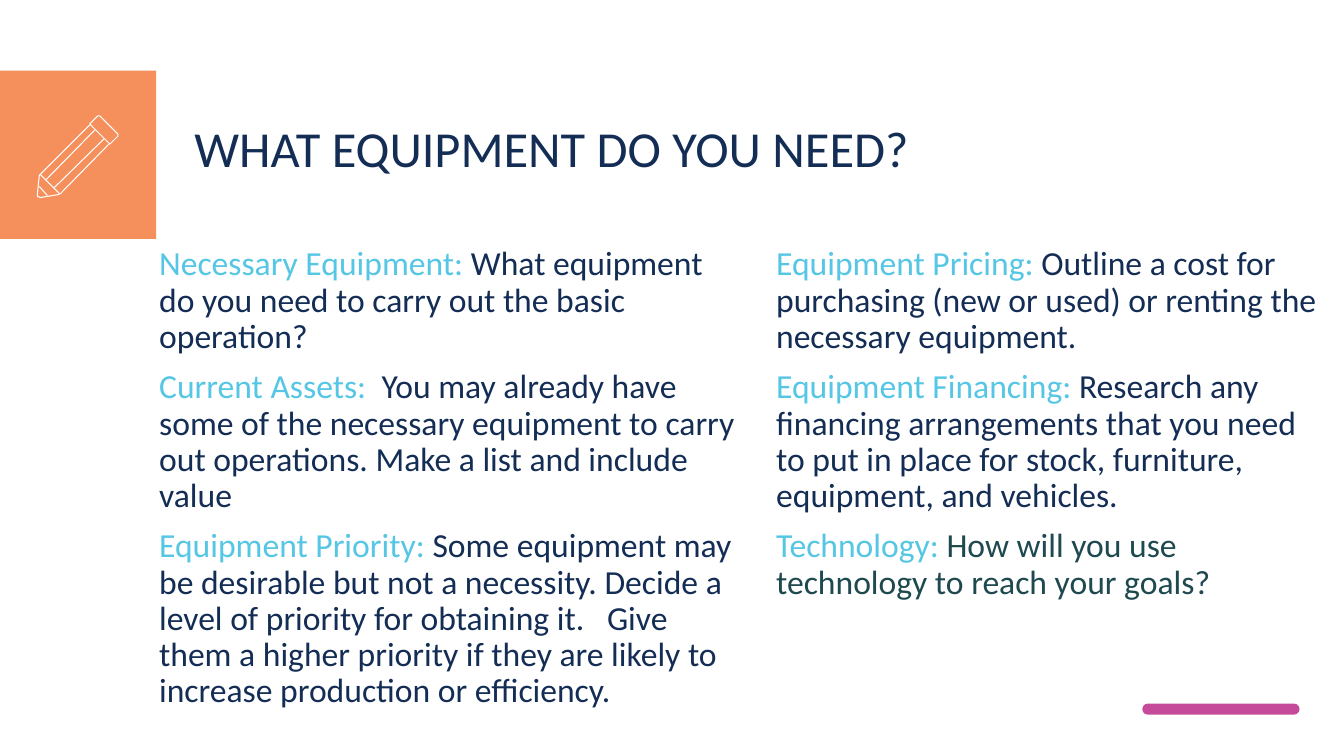
from lxml import etree
from pptx import Presentation
from pptx.dml.color import RGBColor
from pptx.enum.shapes import MSO_CONNECTOR, MSO_SHAPE
from pptx.enum.text import MSO_ANCHOR
from pptx.oxml.ns import qn
from pptx.util import Inches, Pt

RECT, PILL = MSO_SHAPE.RECTANGLE, MSO_SHAPE.ROUNDED_RECTANGLE
STRAIGHT, TOP = MSO_CONNECTOR.STRAIGHT, MSO_ANCHOR.TOP

# Content: each paragraph is a list of (text, colour name)
TITLE = [[("WHAT EQUIPMENT DO YOU NEED?", "navy")]]
LEFT = [
    [("Necessary Equipment: ", "sky"),
     ("What equipment do you need to carry out the basic operation?", "navy")],
    [("Current Assets:  ", "sky"),
     ("You may already have some of the necessary equipment to carry out "
      "operations. Make a list and include value", "navy")],
    [("Equipment Priority: ", "sky"),
     ("Some equipment may be desirable but not a necessity. Decide a level of "
      "priority for obtaining it.   Give them a higher priority if they are "
      "likely to increase production or efficiency.", "navy")],
]
RIGHT = [
    [("Equipment Pricing: ", "sky"),
     ("Outline a cost for purchasing (new or used) or renting the necessary "
      "equipment.", "navy")],
    [("Equipment Financing: ", "sky"),
     ("Research any financing arrangements that you need to put in place for "
      "stock, furniture, equipment, and vehicles.", "navy")],
    [("Technology: ", "sky"),
     ("How will you use technology to reach your goals?", "teal")],
]

# Theme and layout, in inches
THEME = {
    "navy": "142D55", "sky": "56C6E5", "teal": "1E494F", "white": "FFFFFF",
    "orange": "F26B27", "pink": "C54A9A",
    "font": "Calibri", "title": 36, "body": 24, "stroke": 0.75,
}
SLIDE_W, SLIDE_H = 13.33, 7.5
BODY_TOP, BODY_H = 2.4, 3.55
TILE = (-0.01, 0.7, 1.56, 1.67)
ACCENT = (11.33, 6.98, 1.56, 0.11)

# Pencil icon: outlines as (closed, points), then straight strokes
PENCIL_OUTLINES = [
    (True, [(1.16, 1.32), (1, 1.16), (0.99, 1.15), (0.97, 1.15), (0.89, 1.23),
            (1.09, 1.43), (1.16, 1.36), (1.17, 1.35), (1.17, 1.33)]),
    (False, [(0.89, 1.24), (0.4, 1.73), (0.39, 1.74), (0.37, 1.93), (0.37, 1.95),
             (0.38, 1.95), (0.4, 1.96), (0.58, 1.93), (0.6, 1.92), (1.08, 1.43)]),
]
PENCIL_STROKES = [
    ((1.03, 1.38), (0.54, 1.86)), ((0.46, 1.78), (0.94, 1.29)),
    ((0.47, 1.94), (0.39, 1.85)), ((0.4, 1.73), (0.59, 1.92)),
]


def color(name):
    return RGBColor.from_string(THEME[name])


def add_text(slide, paragraphs, *, box, size):
    tf = slide.shapes.add_textbox(*map(Inches, box)).text_frame
    tf.word_wrap = True
    tf.vertical_anchor = TOP
    for i, runs in enumerate(paragraphs):
        p = tf.paragraphs[0] if i == 0 else tf.add_paragraph()
        p.line_spacing = 0.9
        p.space_before = Pt(10 if i else 0)
        for text, name in runs:
            r = p.add_run()
            r.text = text
            r.font.name = THEME["font"]
            r.font.size = Pt(THEME[size])
            r.font.color.rgb = color(name)


def add_block(slide, kind, box, name):
    sp = slide.shapes.add_shape(kind, *map(Inches, box))
    sp.shadow.inherit = False
    sp.fill.solid()
    sp.fill.fore_color.rgb = color(name)
    sp.line.fill.background()
    return sp


def style_stroke(sp):
    sp.line.color.rgb = color("white")
    sp.line.width = Pt(THEME["stroke"])


def add_pencil(slide):
    for closed, points in PENCIL_OUTLINES:
        start, *rest = [(Inches(x), Inches(y)) for x, y in points]
        builder = slide.shapes.build_freeform(*start)
        builder.add_line_segments(rest, close=closed)
        sp = builder.convert_to_shape()
        sp.shadow.inherit = False
        sp.fill.background()
        style_stroke(sp)
    for start, end in PENCIL_STROKES:
        sp = slide.shapes.add_connector(STRAIGHT, *map(Inches, start + end))
        style_stroke(sp)
        etree.SubElement(sp._element.spPr, qn("a:effectLst"))


def main():
    prs = Presentation()
    prs.slide_width, prs.slide_height = Inches(SLIDE_W), Inches(SLIDE_H)
    slide = prs.slides.add_slide(prs.slide_layouts[6])

    # Icon tile, three quarters opaque, and the rounded accent bar
    tile = add_block(slide, RECT, TILE, "orange")
    clr = tile._element.spPr.find(".//" + qn("a:srgbClr"))
    etree.SubElement(clr, qn("a:alpha"), val="75000")
    add_block(slide, PILL, ACCENT, "pink").adjustments[0] = 0.5

    # Title and the two columns
    add_text(slide, TITLE, box=(1.83, 1.18, 10.55, 0.76), size="title")
    for paragraphs, left, width in ((LEFT, 1.48, 5.91), (RIGHT, 7.6, 5.56)):
        add_text(slide, paragraphs, box=(left, BODY_TOP, width, BODY_H), size="body")

    add_pencil(slide)
    prs.save("out.pptx")


if __name__ == "__main__":
    main()
